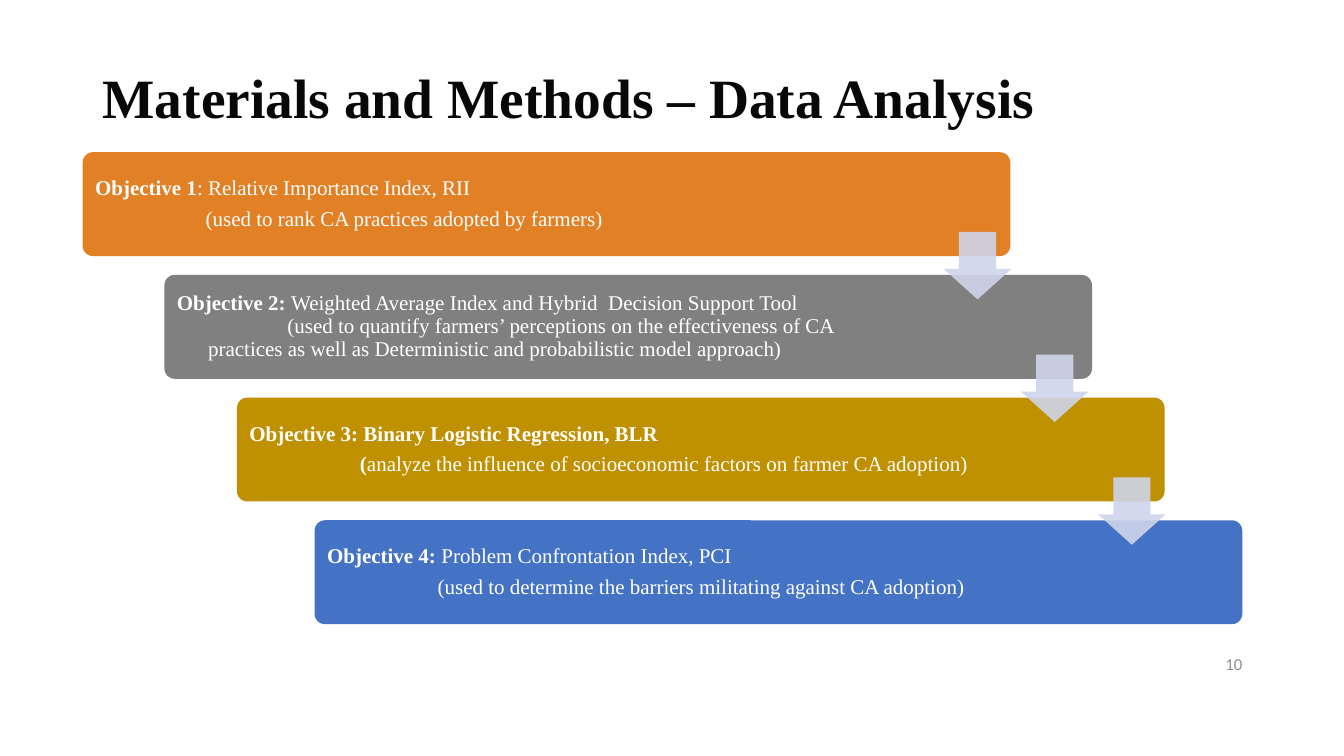
from dataclasses import dataclass
from typing import NamedTuple

from lxml.etree import SubElement
from pptx import Presentation
from pptx.dml.color import RGBColor
from pptx.enum.shapes import MSO_SHAPE
from pptx.enum.text import MSO_ANCHOR, PP_ALIGN
from pptx.oxml.ns import qn
from pptx.util import Emu, Inches, Pt


@dataclass(frozen=True)
class Theme:
    serif: str = "Times New Roman"
    sans: str = "Calibri"
    title_size: float = 39.6
    body_size: float = 15
    number_size: float = 12
    title: str = "080808"
    light: str = "FFFFFF"
    number: str = "918D8C"
    arrow: str = "CFD5EA"
    arrow_opacity: int = 90
    bands: tuple[str, ...] = ("E28025", "808080", "BF9000", "4472C4")


class Area(NamedTuple):
    """A rectangle in percent of the slide's width and height."""
    left: float
    top: float
    width: float
    height: float


class Span(NamedTuple):
    text: str
    bold: bool = False


class Line(NamedTuple):
    spans: tuple[Span, ...]
    indent: float = 0  # percent of the slide's width
    gap: float = 0  # points before the line


@dataclass(frozen=True)
class Objective:
    left: float
    lines: tuple[Line, ...]


THEME = Theme()
WIDTH, HEIGHT = Inches(13.33), Inches(7.5)
TITLE_AREA = Area(6.9, 8.93, 86.27, 8.67)
NUMBER_AREA = Area(70.67, 85.07, 22.5, 5.33)
FIRST_BAND = Area(6.15, 20.13, 69.02, 13.75)
FIRST_ARROW = Area(70.22, 30.67, 5.03, 8.93)
ROW_STEP, ARROW_STEP = 16.23, 5.74
DETAIL, HANGING, GAP = 8.23, 2.33, 5.5

OBJECTIVES = (
    Objective(6.15, (
        Line((Span("Objective 1", True), Span(": Relative Importance Index, RII"))),
        Line((Span("(used to rank CA practices adopted by farmers)"),), DETAIL, GAP),
    )),
    Objective(12.23, (
        Line((Span("Objective 2: ", True),
              Span("Weighted Average Index and Hybrid  Decision Support Tool"))),
        Line((Span("(used to quantify farmers’ perceptions on the effectiveness of CA"),), DETAIL),
        Line((Span("practices as well as Deterministic and probabilistic model approach)"),), HANGING),
    )),
    Objective(17.63, (
        Line((Span("Objective 3: Binary Logistic Regression, BLR", True),)),
        Line((Span("(", True),
              Span("analyze the influence of socioeconomic factors on farmer CA adoption)")),
             DETAIL, GAP),
    )),
    Objective(23.41, (
        Line((Span("Objective 4: ", True), Span("Problem Confrontation Index, PCI"))),
        Line((Span("(used to determine the barriers militating against CA adoption)"),), DETAIL, GAP),
    )),
)


def across(percent: float) -> Emu:
    return Emu(round(WIDTH * percent / 100))


def down(percent: float) -> Emu:
    return Emu(round(HEIGHT * percent / 100))


def place(area: Area) -> tuple[Emu, Emu, Emu, Emu]:
    return across(area.left), down(area.top), across(area.width), down(area.height)


def apply(target, values: dict) -> None:
    for name, value in values.items():
        setattr(target, name, value)


def write(frame, lines: tuple[Line, ...], size: float, color: str, font: str,
          frame_format: dict, para_format: dict) -> None:
    apply(frame, {"word_wrap": True, "vertical_anchor": MSO_ANCHOR.MIDDLE} | frame_format)
    for index, line in enumerate(lines):
        para = frame.add_paragraph() if index else frame.paragraphs[0]
        apply(para, para_format)
        if line.gap:
            para.space_before = Pt(line.gap)
        if line.indent:
            para._p.get_or_add_pPr().set("marL", str(across(line.indent)))
        for span in line.spans:
            run = para.add_run()
            run.text = span.text
            apply(run.font, {"name": font, "size": Pt(size), "bold": span.bold})
            run.font.color.rgb = RGBColor.from_string(color)


def add_filled(page, kind: MSO_SHAPE, area: Area, color: str, adjustments: tuple[float, ...]):
    shape = page.shapes.add_shape(kind, *place(area))
    shape.shadow.inherit = False
    shape.fill.solid()
    shape.fill.fore_color.rgb = RGBColor.from_string(color)
    shape.line.fill.background()
    for index, value in enumerate(adjustments):
        shape.adjustments[index] = value
    return shape


def add_band(page, row: int, objective: Objective) -> None:
    area = FIRST_BAND._replace(left=objective.left, top=FIRST_BAND.top + row * ROW_STEP)
    band = add_filled(page, MSO_SHAPE.ROUNDED_RECTANGLE, area, THEME.bands[row], (0.1,))
    write(band.text_frame, objective.lines, THEME.body_size, THEME.light, THEME.serif,
          {"margin_left": across(0.7), "margin_right": across(9)},
          {"alignment": PP_ALIGN.LEFT, "line_spacing": 0.9})


def add_arrow(page, row: int) -> None:
    area = FIRST_ARROW._replace(left=FIRST_ARROW.left + row * ARROW_STEP,
                                top=FIRST_ARROW.top + row * ROW_STEP)
    arrow = add_filled(page, MSO_SHAPE.DOWN_ARROW, area, THEME.arrow, (0.55, 0.45))
    color = arrow._element.spPr.find(qn("a:solidFill")).find(qn("a:srgbClr"))
    SubElement(color, qn("a:alpha")).set("val", str(THEME.arrow_opacity * 1000))


def add_label(page, area: Area, span: Span, size: float, color: str, font: str,
              para_format: dict) -> None:
    box = page.shapes.add_textbox(*place(area))
    write(box.text_frame, (Line((span,)),), size, color, font, {}, para_format)


def main() -> None:
    deck = Presentation()
    apply(deck, {"slide_width": WIDTH, "slide_height": HEIGHT})
    page = deck.slides.add_slide(deck.slide_layouts[6])
    add_label(page, TITLE_AREA, Span("Materials and Methods – Data Analysis", True),
              THEME.title_size, THEME.title, THEME.serif, {"line_spacing": 0.9})
    for row, objective in enumerate(OBJECTIVES):
        add_band(page, row, objective)
    for row in range(len(OBJECTIVES) - 1):
        add_arrow(page, row)
    add_label(page, NUMBER_AREA, Span("10"), THEME.number_size, THEME.number, THEME.sans,
              {"alignment": PP_ALIGN.RIGHT})
    deck.save("out.pptx")


if __name__ == "__main__":
    main()
